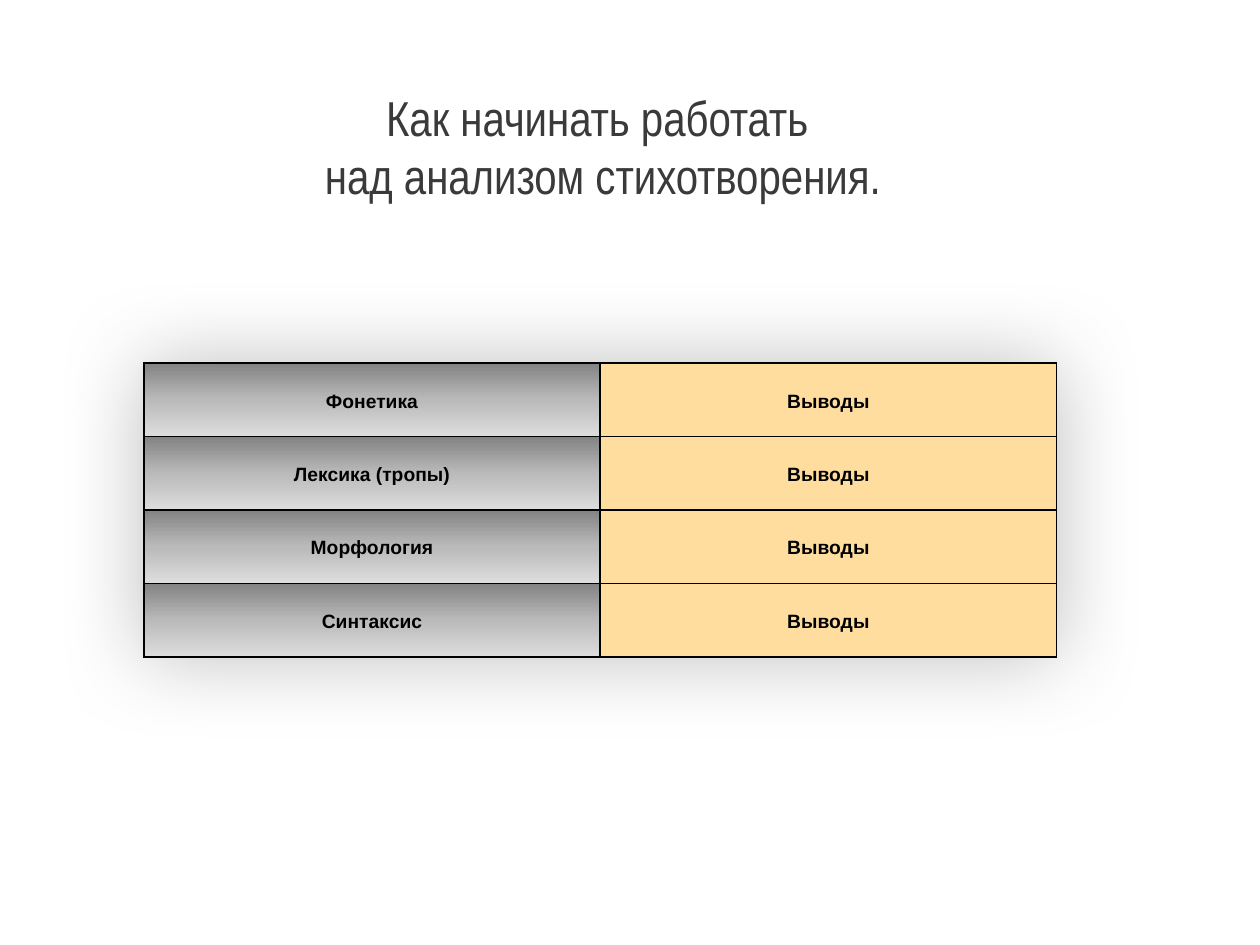
from copy import deepcopy
from dataclasses import dataclass

from lxml.etree import SubElement
from pptx import Presentation
from pptx.dml.color import RGBColor
from pptx.enum.text import MSO_ANCHOR, MSO_AUTO_SIZE, PP_ALIGN
from pptx.oxml import parse_xml
from pptx.oxml.ns import nsdecls, qn
from pptx.util import Cm, Pt


@dataclass(frozen=True)
class Theme:
    title_font: str = "Arial Narrow"
    body_font: str = "Arial"
    title_size: int = 28
    body_size: int = 11
    title_color: str = "3A3A3A"
    ink: str = "000000"
    topic_stops: tuple = ("838383", "BABABA", "DDDDDD")
    result_fill: str = "FFDD9F"


THEME = Theme()
TITLE_LINES = ("Как начинать работать ", "над анализом стихотворения.")
TOPICS = ("Фонетика", "Лексика (тропы)", "Морфология", "Синтаксис")
RESULT = "Выводы"


def set_attrs(target, values):
    for name, value in values.items():
        setattr(target, name, value)


def write_paragraph(p, text, font, size, color, bold=False):
    p.alignment = PP_ALIGN.CENTER
    r = p.add_run()
    r.text = text
    set_attrs(r.font, {"name": font, "size": Pt(size), "bold": bold})
    r.font.color.rgb = RGBColor.from_string(color)


def add_title(s, lines):
    title = s.shapes.title
    set_attrs(title, {"left": Cm(0), "top": Cm(1.35),
                      "width": Cm(24.3), "height": Cm(3.18)})
    tf = title.text_frame
    set_attrs(tf, {"word_wrap": True, "auto_size": MSO_AUTO_SIZE.NONE,
                   "vertical_anchor": MSO_ANCHOR.MIDDLE})
    for i, line in enumerate(lines):
        p = tf.add_paragraph() if i else tf.paragraphs[0]
        write_paragraph(p, line, THEME.title_font, THEME.title_size,
                        THEME.title_color)


def add_borders(cell):
    tc_pr = cell._tc.get_or_add_tcPr()
    for side in ("lnL", "lnR", "lnT", "lnB"):
        ln = SubElement(tc_pr, qn(f"a:{side}"), w=str(Pt(1)))
        fill = SubElement(ln, qn("a:solidFill"))
        SubElement(fill, qn("a:srgbClr"), val=THEME.ink)


def fill_gradient(cell, colors):
    """Spread the colours evenly from the top of the cell to its bottom."""
    cell.fill.gradient()
    cell.fill.gradient_angle = 270
    gs_list = cell._tc.tcPr.find(qn("a:gradFill")).find(qn("a:gsLst"))
    while len(gs_list) < len(colors):
        gs_list.append(deepcopy(gs_list[-1]))
    for i, (stop, color) in enumerate(zip(cell.fill.gradient_stops, colors)):
        stop.position = i / (len(colors) - 1)
        stop.color.rgb = RGBColor.from_string(color)


def fill_solid(cell, color):
    cell.fill.solid()
    cell.fill.fore_color.rgb = RGBColor.from_string(color)


def write_cell(cell, text):
    set_attrs(cell, {"margin_left": Cm(0.18), "margin_right": Cm(0.18),
                     "margin_top": 0, "margin_bottom": 0,
                     "vertical_anchor": MSO_ANCHOR.MIDDLE})
    p = cell.text_frame.paragraphs[0]
    p.line_spacing = 1.15
    write_paragraph(p, text, THEME.body_font, THEME.body_size, THEME.ink, True)
    add_borders(cell)


def add_soft_shadow(table):
    table._tbl.tblPr.insert(0, parse_xml(
        f'<a:effectLst {nsdecls("a")}>'
        f'<a:outerShdw blurRad="{Pt(50)}" dist="0" algn="ctr" rotWithShape="0">'
        f'<a:srgbClr val="{THEME.ink}"><a:alpha val="25000"/></a:srgbClr>'
        '</a:outerShdw></a:effectLst>'))


def add_analysis_table(s, topics):
    frame = s.shapes.add_table(len(topics), 2, Cm(2.9), Cm(7.32),
                               Cm(18.4), Cm(1.48 * len(topics)))
    table = frame.table
    set_attrs(table, {"first_row": False, "horz_banding": False})
    add_soft_shadow(table)
    for row, topic in zip(table.rows, topics):
        topic_cell, result_cell = row.cells
        write_cell(topic_cell, topic)
        fill_gradient(topic_cell, THEME.topic_stops)
        write_cell(result_cell, RESULT)
        fill_solid(result_cell, THEME.result_fill)


def main():
    prs = Presentation()
    set_attrs(prs, {"slide_width": Cm(25.4), "slide_height": Cm(19.05)})
    s = prs.slides.add_slide(prs.slide_layouts[5])
    add_title(s, TITLE_LINES)
    add_analysis_table(s, TOPICS)
    prs.save("out.pptx")


if __name__ == "__main__":
    main()
